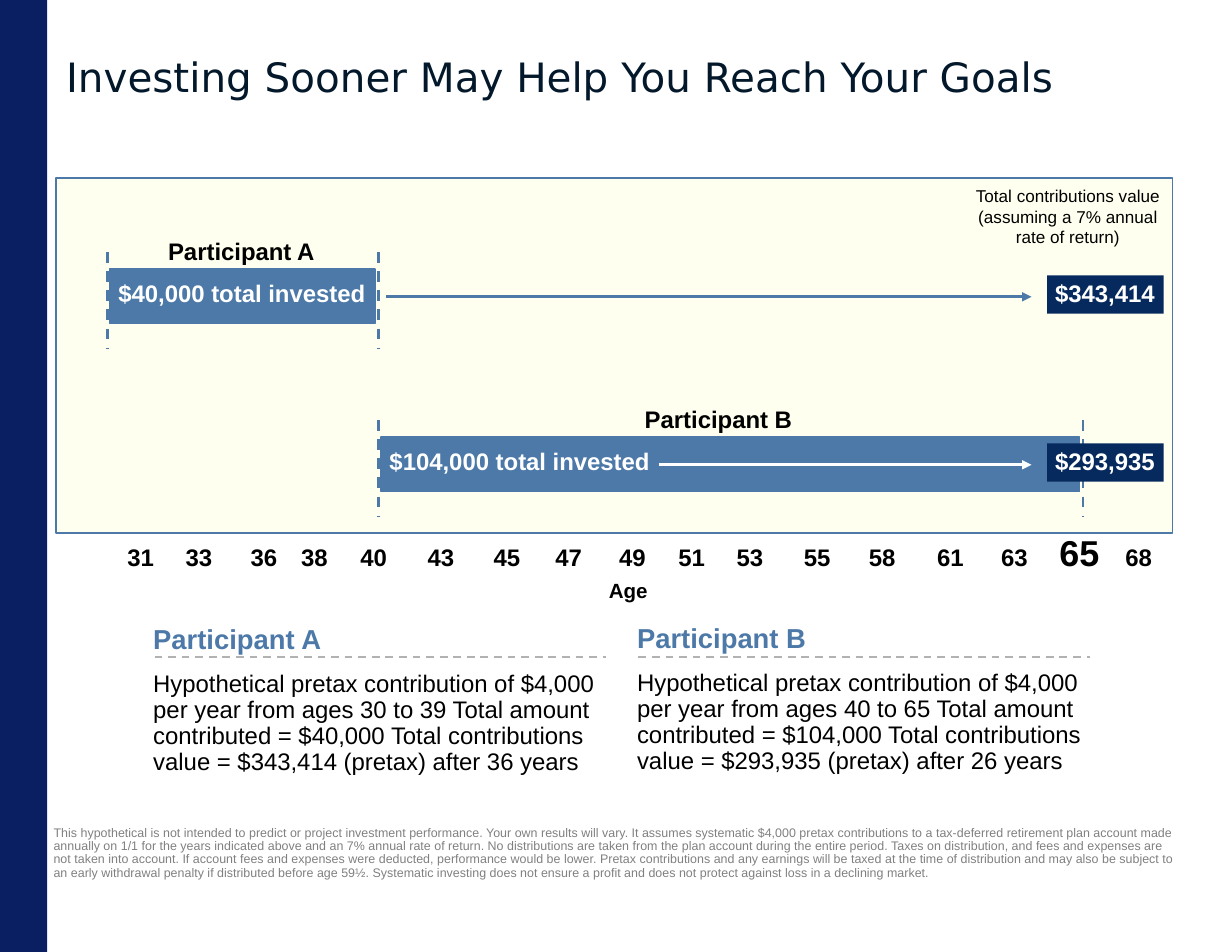
from lxml.etree import SubElement
from pptx import Presentation
from pptx.dml.color import RGBColor
from pptx.enum.dml import MSO_LINE
from pptx.enum.shapes import MSO_CONNECTOR, MSO_SHAPE
from pptx.enum.text import MSO_ANCHOR, MSO_AUTO_SIZE, PP_ALIGN
from pptx.oxml.ns import qn
from pptx.util import Inches, Pt

COLORS = {
    "stripe": "0A1F62", "panel": "FFFFEF", "blue": "4C79A8", "badge": "072A5E",
    "title": "03182A", "black": "000000", "white": "FFFFFF",
    "rule": "B2B2B2", "note": "808080",
}
AGES = {
    31: 1.04, 33: 1.56, 36: 2.14, 38: 2.59, 40: 3.12, 43: 3.72, 45: 4.31,
    47: 4.86, 49: 5.43, 51: 5.96, 53: 6.48, 55: 7.08, 58: 7.66, 61: 8.27,
    63: 8.84, 65: 9.36, 68: 9.95,
}
DISCLOSURE = (
    "This hypothetical is not intended to predict or project investment performance. "
    "Your own results will vary. It assumes systematic $4,000 pretax contributions to a "
    "tax-deferred retirement plan account made annually on 1/1 for the years indicated "
    "above and an 7% annual rate of return. No distributions are taken from the plan "
    "account during the entire period. Taxes on distribution, and fees and expenses are "
    "not taken into account. If account fees and expenses were deducted, performance "
    "would be lower. Pretax contributions and any earnings will be taxed at the time of "
    "distribution and may also be subject to an early withdrawal penalty if distributed "
    "before age 59½. Systematic investing does not ensure a profit and does not protect "
    "against loss in a declining market."
)


def color(name):
    return RGBColor.from_string(COLORS[name])


def add_block(page, box, fill, line=None):
    block = page.shapes.add_shape(MSO_SHAPE.RECTANGLE, *map(Inches, box))
    block.shadow.inherit = False
    block.fill.solid()
    block.fill.fore_color.rgb = color(fill)
    if line:
        block.line.color.rgb = color(line)
        block.line.width = Pt(1)
    else:
        block.line.fill.background()


def add_line(page, start, end, stroke, width=1.75, dashed=False, arrow=False):
    line = page.shapes.add_connector(
        MSO_CONNECTOR.STRAIGHT, *map(Inches, (*start, *end)))
    line.line.color.rgb = color(stroke)
    line.line.width = Pt(width)
    if dashed:
        line.line.dash_style = MSO_LINE.DASH
    if arrow:
        SubElement(line.line._get_or_add_ln(), qn("a:tailEnd"), type="triangle")
    SubElement(line._element.spPr, qn("a:effectLst"))


def write(para, text, size, ink, bold=False, font="Arial"):
    span = para.add_run()
    span.text = text
    span.font.name = font
    span.font.size = Pt(size)
    span.font.bold = bold
    span.font.color.rgb = color(ink)


def add_text(page, box, lines, size=15.4, ink="black", bold=False,
             centered=False, wrap=True, spacing=None):
    frame = page.shapes.add_textbox(*map(Inches, box)).text_frame
    frame.word_wrap = wrap
    frame.auto_size = MSO_AUTO_SIZE.SHAPE_TO_FIT_TEXT
    para = frame.paragraphs[0]
    para.alignment = PP_ALIGN.CENTER if centered else PP_ALIGN.LEFT
    para.line_spacing = spacing
    for index, text in enumerate(lines):
        if index:
            para.add_line_break()
        write(para, text, size, ink, bold)


def add_title(page, box, text):
    title = page.shapes.title
    title.left, title.top, title.width, title.height = map(Inches, box)
    frame = title.text_frame
    frame.word_wrap = True
    frame.vertical_anchor = MSO_ANCHOR.MIDDLE
    para = frame.paragraphs[0]
    para.alignment = PP_ALIGN.LEFT
    para.line_spacing = 0.9
    write(para, text, 26, "title", font="DejaVu Sans")


def add_track(page, box, name, name_box, invested, invested_box, value,
              arrow_left, arrow_ink):
    """One participant's bar between two age markers, with its final value."""
    left, top, width, height = box
    right = left + width
    label = dict(bold=True, centered=True, wrap=False)
    add_block(page, (left + 0.02, top + 0.15, width - 0.05, 0.49), "blue", "blue")
    for text, (text_left, text_width), offset, ink in (
            (name, name_box, -0.19, "black"), (invested, invested_box, 0.19, "white")):
        add_text(page, (text_left, top + offset, text_width, 0.36), [text],
                 ink=ink, **label)
    for x in (left, right):
        add_line(page, (x, top), (x, top + height), "blue", dashed=True)
    add_line(page, (arrow_left, top + 0.4), (9.21, top + 0.4), arrow_ink, arrow=True)
    add_block(page, (9.35, top + 0.21, 1.04, 0.34), "badge")
    add_text(page, (9.31, top + 0.19, 1.11, 0.36), [value], ink="white", **label)


def add_timeline(page, box):
    left, top, width, height = box
    add_block(page, box, "panel", "blue")
    add_text(page, (left + width - 1.93, top + 0.02, 1.99, 0.66),
             ["Total contributions value", "(assuming a 7% annual rate of return)"],
             size=11, centered=True)
    add_track(page, (left + 0.46, top + 0.66, 2.42, 0.87),
              "Participant A", (1.39, 1.53), "$40,000 total invested", (0.94, 2.44),
              "$343,414", 3.45, "blue")
    add_track(page, (left + 2.88, top + 2.16, 6.29, 0.87),
              "Participant B", (5.65, 1.53), "$104,000 total invested", (3.36, 2.56),
              "$293,935", 5.88, "white")


def add_age_axis(page, top):
    for age, left in AGES.items():
        # Retirement age stands out
        box, size = ((left, top - 0.09, 0.61, 0.45), 23.1) if age == 65 else (
            (left, top, 0.57, 0.33), 15.4)
        add_text(page, box, [str(age)], size=size, bold=True, spacing=0.9)
    add_text(page, (5.06, top + 0.32, 1.1, 0.3), ["Age"], size=13.2, bold=True,
             centered=True, spacing=0.9)


def add_summary(page, box, name, text):
    left, top, width, height = box
    add_text(page, (left, top, 3.2, 0.37), [name], size=17.6, ink="blue",
             bold=True, spacing=0.9)
    add_line(page, (left + 0.11, 5.87), (left + 4.14, 5.87), "rule", 1.25, dashed=True)
    add_text(page, (left, top + 0.41, width, height - 0.41), [text], spacing=0.9)


def main():
    deck = Presentation()
    deck.slide_width, deck.slide_height = Inches(11), Inches(8.5)
    page = deck.slides.add_slide(deck.slide_layouts[5])

    # Frame and title
    add_block(page, (0, 0, 0.42, 8.5), "stripe")
    add_title(page, (0.49, 0.32, 9.84, 0.77),
              "Investing Sooner May Help You Reach Your Goals")

    # Timeline and ages
    add_timeline(page, (0.5, 1.59, 9.97, 3.17))
    add_age_axis(page, 4.82)

    # Participant summaries
    add_summary(page, (1.27, 5.54, 4.16, 1.68), "Participant A",
                "Hypothetical pretax contribution of $4,000 per year from ages 30 to 39 "
                "Total amount contributed = $40,000 Total contributions value = "
                "$343,414 (pretax) after 36 years")
    add_summary(page, (5.59, 5.53, 4.34, 1.44), "Participant B",
                "Hypothetical pretax contribution of $4,000 per year from ages 40 to 65 "
                "Total amount contributed = $104,000 Total contributions value = "
                "$293,935 (pretax) after 26 years")

    # Disclosure
    add_text(page, (0.38, 7.33, 10.29, 0.59), [DISCLOSURE], size=8, ink="note",
             spacing=0.9)
    deck.save("out.pptx")


if __name__ == "__main__":
    main()
